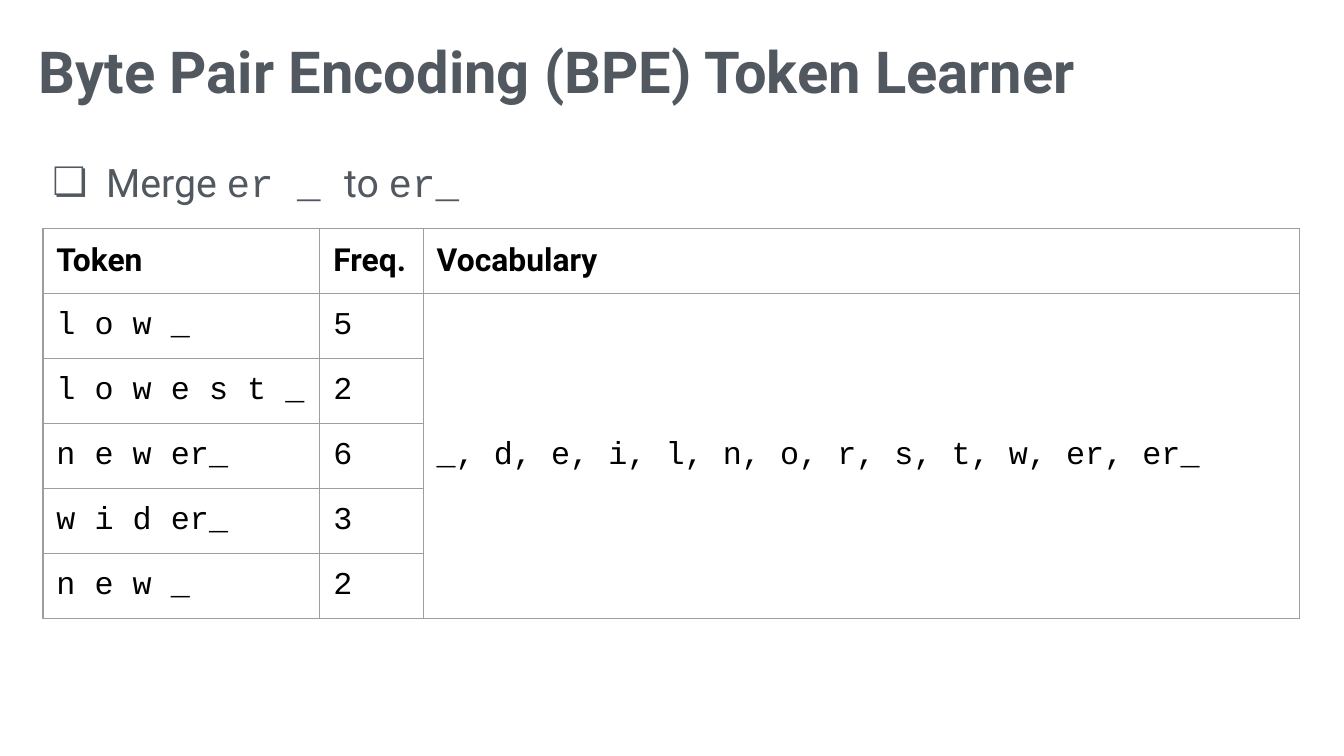
from lxml.etree import SubElement
from pptx import Presentation
from pptx.dml.color import RGBColor
from pptx.enum.text import MSO_ANCHOR as Anchor
from pptx.oxml import parse_xml
from pptx.oxml.ns import nsdecls, qn
from pptx.util import Inches, Pt

SLATE = RGBColor(0x52, 0x58, 0x60)
BLACK = RGBColor(0, 0, 0)
GREY = RGBColor(0x9E, 0x9E, 0x9E)
SANS, MONO = "Roboto", "Courier New"
WIDTH, HEIGHT = Inches(10), Inches(10 * 9 / 16)

# Table grid in inches; rows grow to fit their text
LEFT, TOP, ROW_HEIGHT = 0.32, 1.7, 0.42
COLUMNS = (2.06, 0.77, 6.52)
HEADINGS = ("Token", "Freq.", "Vocabulary")
TOKENS = (("l o w _", 5), ("l o w e s t _", 2), ("n e w er_", 6),
          ("w i d er_", 3), ("n e w _", 2))
VOCABULARY = "_, d, e, i, l, n, o, r, s, t, w, er, er_"


def style(font, size, name, color, bold=False):
    font.size, font.name, font.bold = Pt(size), name, bold
    font.color.rgb = color


def set_margins(frame, margin):
    frame.margin_left = frame.margin_right = Inches(margin)
    frame.margin_top = frame.margin_bottom = Inches(margin)


def add_text(s, left, top, width, height, pieces, size, bold=False):
    """Add a one-paragraph box; the position is in shares of the slide."""
    box = s.shapes.add_textbox(int(left * WIDTH), int(top * HEIGHT),
                               int(width * WIDTH), int(height * HEIGHT))
    tf = box.text_frame
    tf.word_wrap = True
    set_margins(tf, 0.06)
    p = tf.paragraphs[0]
    for text, name in pieces:
        r = p.add_run()
        r.text = text
        style(r.font, size, name, SLATE, bold)
    return p


def add_bullet(p, char, size):
    pPr = p._p.get_or_add_pPr()
    pPr.set("marL", str(Inches(0.5)))
    pPr.set("indent", str(Inches(-0.4)))
    color = SubElement(pPr, qn("a:buClr"))
    SubElement(color, qn("a:srgbClr")).set("val", str(SLATE))
    SubElement(pPr, qn("a:buSzPts")).set("val", str(size * 100))
    SubElement(pPr, qn("a:buFont")).set("typeface", SANS)
    SubElement(pPr, qn("a:buChar")).set("char", char)


def add_borders(cell):
    tcPr = cell._tc.get_or_add_tcPr()
    for i, side in enumerate("LRTB"):
        tcPr.insert(i, parse_xml(
            f'<a:ln{side} {nsdecls("a")} w="{Pt(0.75)}"><a:solidFill>'
            f'<a:srgbClr val="{GREY}"/></a:solidFill></a:ln{side}>'))


def write_cell(cell, text, name, bold=False):
    cell.vertical_anchor = Anchor.MIDDLE
    set_margins(cell, 0.1)
    p = cell.text_frame.paragraphs[0]
    p.text = text
    style(p.runs[0].font, 17, name, BLACK, bold)


def add_token_table(s):
    rows = [HEADINGS] + [(token, str(freq)) for token, freq in TOKENS]
    table = s.shapes.add_table(
        len(rows), len(COLUMNS), Inches(LEFT), Inches(TOP),
        Inches(sum(COLUMNS)), Inches(ROW_HEIGHT * len(rows))).table
    table.first_row = table.horz_banding = False
    for column, width in zip(table.columns, COLUMNS):
        column.width = Inches(width)
    for cell in table.iter_cells():
        cell.fill.background()
        add_borders(cell)
    for i, row in enumerate(rows):
        table.rows[i].height = Inches(ROW_HEIGHT)
        for j, text in enumerate(row):
            write_cell(table.cell(i, j), text, MONO if i else SANS, i == 0)

    # One vocabulary cell beside all the tokens
    vocabulary = table.cell(1, 2)
    vocabulary.merge(table.cell(len(rows) - 1, 2))
    write_cell(vocabulary, VOCABULARY, MONO)


def main():
    prs = Presentation()
    prs.slide_width, prs.slide_height = WIDTH, HEIGHT
    s = prs.slides.add_slide(prs.slide_layouts[6])

    # Title
    add_text(s, 0.023, 0.036, 0.953, 0.087,
             [("Byte Pair Encoding (BPE) Token Learner", SANS)], 31, True)

    # Merge step
    p = add_text(s, 0.023, 0.19, 0.935, 0.7,
                 [("Merge ", SANS), ("er _ ", MONO), ("to ", SANS),
                  ("er_", MONO)], 21)
    p.line_spacing = 1.15
    add_bullet(p, "❏", 21)

    # Tokens and vocabulary
    add_token_table(s)
    prs.save("out.pptx")


if __name__ == "__main__":
    main()
